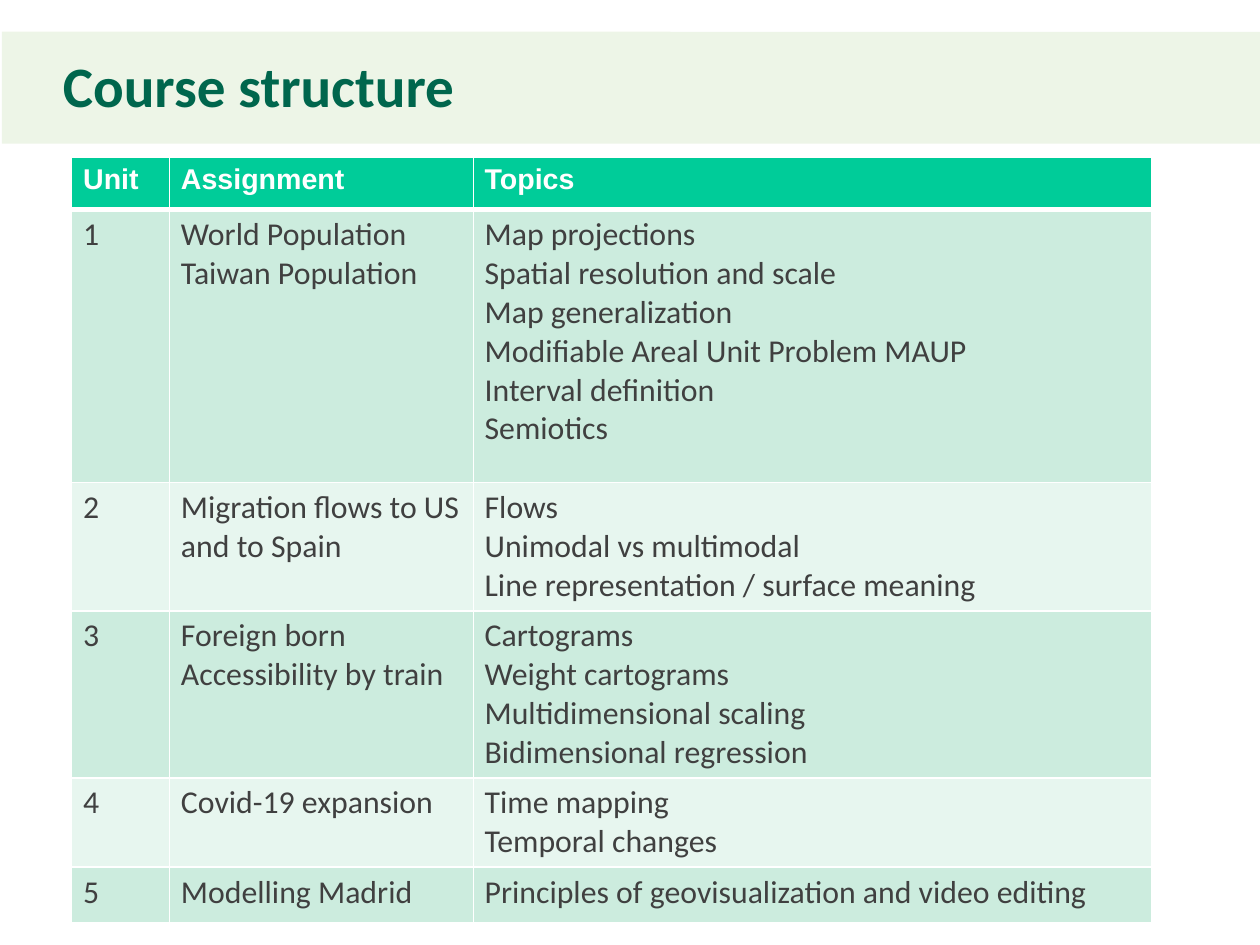
from dataclasses import dataclass

from lxml.etree import SubElement
from pptx import Presentation
from pptx.dml.color import RGBColor
from pptx.enum.shapes import MSO_SHAPE as Preset
from pptx.enum.text import MSO_ANCHOR as Anchor, PP_ALIGN as Align
from pptx.oxml import parse_xml
from pptx.oxml.ns import nsdecls, qn
from pptx.slide import Slide
from pptx.table import _Cell as Cell
from pptx.text.text import TextFrame
from pptx.util import Pt

WHITE = RGBColor(0xFF, 0xFF, 0xFF)
BAND_GREEN = RGBColor(0x57, 0x9D, 0x1C)
TITLE_GREEN = RGBColor(0x00, 0x66, 0x4D)
HEADER_GREEN = RGBColor(0x00, 0xCC, 0x99)
ODD_GREEN = RGBColor(0xCC, 0xEC, 0xDE)
EVEN_GREEN = RGBColor(0xE7, 0xF6, 0xEF)
TEXT_GREY = RGBColor(0x40, 0x40, 0x40)

SLIDE_WIDTH, SLIDE_HEIGHT = 793.7, 595.28
HEADINGS = ["Unit", "Assignment", "Topics"]
COLUMN_WIDTHS = [61.6, 191.3, 427.4]
HEADER_HEIGHT = 32.7


@dataclass(frozen=True)
class TextStyle:
    font: str
    size: float
    color: RGBColor
    bold: bool = False


@dataclass(frozen=True)
class Unit:
    assignments: list[str]
    topics: list[str]
    height: float


TITLE_STYLE = TextStyle("Calibri", 36, TITLE_GREEN, True)
HEADER_STYLE = TextStyle("Arial", 18, WHITE, True)
BODY_STYLE = TextStyle("Calibri", 20, TEXT_GREY)

UNITS = [
    Unit(["World Population", "Taiwan Population"],
         ["Map projections", "Spatial resolution and scale", "Map generalization",
          "Modifiable Areal Unit Problem MAUP", "Interval definition", "Semiotics"], 172.1),
    Unit(["Migration flows to US and to Spain"],
         ["Flows", "Unimodal vs multimodal", "Line representation / surface meaning"], 80.5),
    Unit(["Foreign born", "Accessibility by train"],
         ["Cartograms", "Weight cartograms", "Multidimensional scaling",
          "Bidimensional regression"], 105),
    Unit(["Covid-19 expansion"], ["Time mapping", "Temporal changes"], 56.1),
    Unit(["Modelling Madrid"], ["Principles of geovisualization and video editing"], 35.3),
]


def write(frame: TextFrame, lines: list[str], style: TextStyle) -> None:
    frame.text = "\n".join(lines)
    for paragraph in frame.paragraphs:
        paragraph.alignment = Align.LEFT
        for run in paragraph.runs:
            run.font.name = style.font
            run.font.size = Pt(style.size)
            run.font.bold = style.bold
            run.font.color.rgb = style.color


def draw_borders(cell: Cell, top: float, bottom: float) -> None:
    properties = cell._tc.get_or_add_tcPr()
    widths = {"lnL": 1, "lnR": 1, "lnT": top, "lnB": bottom}
    for position, (side, width) in enumerate(widths.items()):
        properties.insert(position, parse_xml(
            f'<a:{side} {nsdecls("a")} w="{Pt(width)}"><a:solidFill>'
            f'<a:srgbClr val="{WHITE}"/></a:solidFill></a:{side}>'))


def add_band(slide: Slide) -> None:
    left = 1.2
    band = slide.shapes.add_shape(
        Preset.ROUNDED_RECTANGLE, Pt(left), Pt(20), Pt(SLIDE_WIDTH - left), Pt(70.5))
    band.adjustments[0] = 0.002
    band.shadow.inherit = False
    band.line.fill.background()
    band.fill.solid()
    band.fill.fore_color.rgb = BAND_GREEN
    tint = band.element.spPr.find(f"{qn('a:solidFill')}/{qn('a:srgbClr')}")
    SubElement(tint, qn("a:alpha"), val="10000")
    # Send the band behind the title
    slide.shapes.element.insert(2, band.element)


def add_title(slide: Slide) -> None:
    title = slide.shapes.title
    title.left, title.top, title.width, title.height = Pt(39.6), Pt(23.7), Pt(714.2), Pt(64)
    frame = title.text_frame
    write(frame, ["Course structure"], TITLE_STYLE)
    frame.word_wrap = True
    frame.vertical_anchor = Anchor.MIDDLE
    frame.margin_left = frame.margin_top = frame.margin_right = frame.margin_bottom = Pt(0)
    frame.paragraphs[0].line_spacing = 0.94


def add_course_table(slide: Slide) -> None:
    heights = [HEADER_HEIGHT] + [unit.height for unit in UNITS]
    course = slide.shapes.add_table(
        len(heights), len(HEADINGS), Pt(45.2), Pt(99.3),
        Pt(sum(COLUMN_WIDTHS)), Pt(sum(heights))).table
    for column, width in zip(course.columns, COLUMN_WIDTHS):
        column.width = Pt(width)
    for row, height in zip(course.rows, heights):
        row.height = Pt(height)

    # One row of headings, then one row for each unit
    contents = [[[heading] for heading in HEADINGS]]
    contents += [[[str(number)], unit.assignments, unit.topics]
                 for number, unit in enumerate(UNITS, 1)]
    for row_number, entries in enumerate(contents):
        is_header = row_number == 0
        row_fill = HEADER_GREEN if is_header else ODD_GREEN if row_number % 2 else EVEN_GREEN
        for column_number, lines in enumerate(entries):
            cell = course.cell(row_number, column_number)
            write(cell.text_frame, lines, HEADER_STYLE if is_header else BODY_STYLE)
            cell.fill.solid()
            cell.fill.fore_color.rgb = row_fill
            draw_borders(cell, top=3 if row_number == 1 else 1, bottom=3 if is_header else 1)


def main() -> None:
    presentation = Presentation()
    presentation.slide_width, presentation.slide_height = Pt(SLIDE_WIDTH), Pt(SLIDE_HEIGHT)
    slide = presentation.slides.add_slide(presentation.slide_layouts[5])
    add_band(slide)
    add_title(slide)
    add_course_table(slide)
    presentation.save("out.pptx")


if __name__ == "__main__":
    main()
